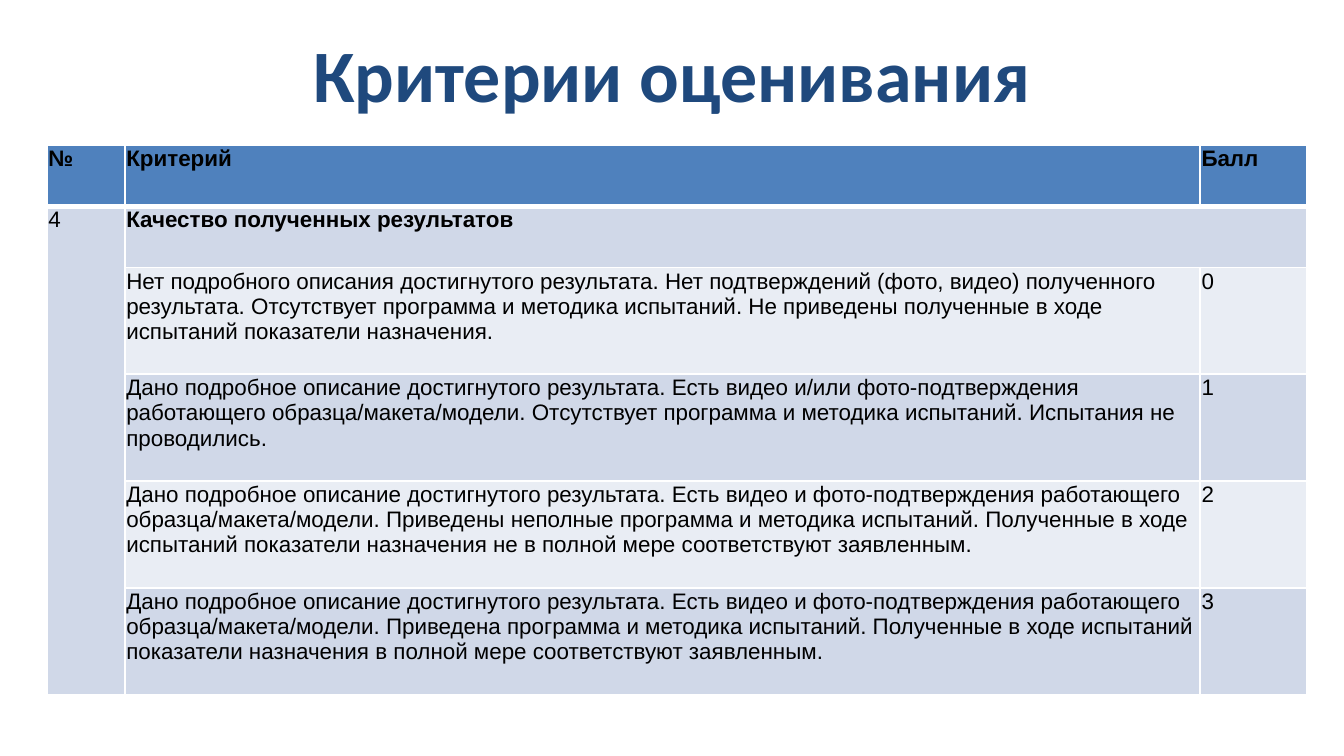
from typing import NamedTuple

from lxml import etree
from pptx import Presentation
from pptx.dml.color import RGBColor
from pptx.enum.text import MSO_ANCHOR, PP_ALIGN
from pptx.oxml.ns import qn
from pptx.util import Inches, Pt

CENTER = PP_ALIGN.CENTER
LEFT = PP_ALIGN.LEFT
TOP = MSO_ANCHOR.TOP
MIDDLE = MSO_ANCHOR.MIDDLE

NAVY = RGBColor(0x1F, 0x49, 0x7D)
HEADER_BLUE = RGBColor(0x4F, 0x81, 0xBD)
BAND_DARK = RGBColor(0xD0, 0xD8, 0xE8)
BAND_LIGHT = RGBColor(0xE9, 0xED, 0xF4)
BLACK = RGBColor(0, 0, 0)
WHITE = RGBColor(0xFF, 0xFF, 0xFF)

SLIDE_WIDTH = Inches(10)
SLIDE_HEIGHT = SLIDE_WIDTH * 9 // 16
COLUMN_WIDTHS = (0.58, 8, 0.79)
# Two heading rows, then four equal levels in the rest of the height
TABLE_HEIGHT, HEADINGS_HEIGHT = 4.09, 0.91
LEVEL_HEIGHT = (TABLE_HEIGHT - HEADINGS_HEIGHT) / 4
ROW_HEIGHTS = (HEADINGS_HEIGHT / 2,) * 2 + (LEVEL_HEIGHT,) * 4
THIN, THICK = 1, 3


class Row(NamedTuple):
    number: str
    criterion: str
    score: str
    bold: bool = False


ROWS = (
    Row("№", "Критерий", "Балл", True),
    Row("4", "Качество полученных результатов", "", True),
    Row("", "Нет подробного описания достигнутого результата. Нет подтверждений "
        "(фото, видео) полученного результата. Отсутствует программа и методика "
        "испытаний. Не приведены полученные в ходе испытаний показатели назначения.", "0"),
    Row("", "Дано подробное описание достигнутого результата. Есть видео и/или "
        "фото-подтверждения работающего образца/макета/модели. Отсутствует программа "
        "и методика испытаний. Испытания не проводились.", "1"),
    Row("", "Дано подробное описание достигнутого результата. Есть видео и "
        "фото-подтверждения работающего образца/макета/модели. Приведены неполные "
        "программа и методика испытаний. Полученные в ходе испытаний показатели "
        "назначения не в полной мере соответствуют заявленным.", "2"),
    Row("", "Дано подробное описание достигнутого результата. Есть видео и "
        "фото-подтверждения работающего образца/макета/модели. Приведена программа "
        "и методика испытаний. Полученные в ходе испытаний показатели назначения "
        "в полной мере соответствуют заявленным.", "3"),
)


def write(frame, text: str, font_name: str, size: float, color: RGBColor,
          bold: bool, align=LEFT) -> None:
    paragraph = frame.paragraphs[0]
    paragraph.alignment = align
    run = paragraph.add_run()
    run.text = text
    font_format = {"name": font_name, "size": Pt(size), "bold": bold}
    for attribute, value in font_format.items():
        setattr(run.font, attribute, value)
    run.font.color.rgb = color


def add_borders(cell, widths: dict[str, float]) -> None:
    properties = cell._tc.get_or_add_tcPr()
    for side, width in widths.items():
        line = etree.SubElement(properties, qn(f"a:ln{side}"), w=str(Pt(width)))
        fill = etree.SubElement(line, qn("a:solidFill"))
        etree.SubElement(fill, qn("a:srgbClr"), val=str(WHITE))


def format_cell(cell, fill: RGBColor, top: float, bottom: float) -> None:
    cell_format = {
        "margin_left": Inches(0.01), "margin_right": Inches(0.01),
        "margin_top": Inches(0.01), "margin_bottom": 0, "vertical_anchor": TOP,
    }
    for attribute, value in cell_format.items():
        setattr(cell, attribute, value)
    add_borders(cell, {"L": THIN, "R": THIN, "T": top, "B": bottom})
    cell.fill.solid()
    cell.fill.fore_color.rgb = fill


def add_title(slide, text: str) -> None:
    title = slide.shapes.add_textbox(Inches(0.5), Inches(0.23), Inches(9), Inches(0.62))
    frame = title.text_frame
    frame.word_wrap = True
    frame.vertical_anchor = MIDDLE
    write(frame, text, "Calibri", 39.6, NAVY, True, CENTER)


def add_criteria(slide, rows: tuple[Row, ...]) -> None:
    criteria = slide.shapes.add_table(
        len(rows), len(COLUMN_WIDTHS), Inches(0.35), Inches(1.08),
        Inches(sum(COLUMN_WIDTHS)), Inches(TABLE_HEIGHT)).table
    for column, width in zip(criteria.columns, COLUMN_WIDTHS):
        column.width = Inches(width)
    for table_row, height in zip(criteria.rows, ROW_HEIGHTS):
        table_row.height = Inches(height)

    # The number spans its levels, the criterion name spans the score column
    criteria.cell(1, 0).merge(criteria.cell(len(rows) - 1, 0))
    criteria.cell(1, 1).merge(criteria.cell(1, 2))

    for r, row in enumerate(rows):
        band = BAND_DARK if r % 2 else BAND_LIGHT
        fill = HEADER_BLUE if r == 0 else band
        top = THICK if r == 1 else THIN
        bottom = THICK if r == 0 else THIN
        for c, text in enumerate((row.number, row.criterion, row.score)):
            cell = criteria.cell(r, c)
            format_cell(cell, fill, top, bottom)
            if text:
                bold = row.bold and not text.isdigit()
                write(cell.text_frame, text, "Arial", 12, BLACK, bold)


def main() -> None:
    deck = Presentation()
    deck.slide_width, deck.slide_height = SLIDE_WIDTH, SLIDE_HEIGHT
    slide = deck.slides.add_slide(deck.slide_layouts[6])
    add_title(slide, "Критерии оценивания")
    add_criteria(slide, ROWS)
    deck.save("out.pptx")


if __name__ == "__main__":
    main()
